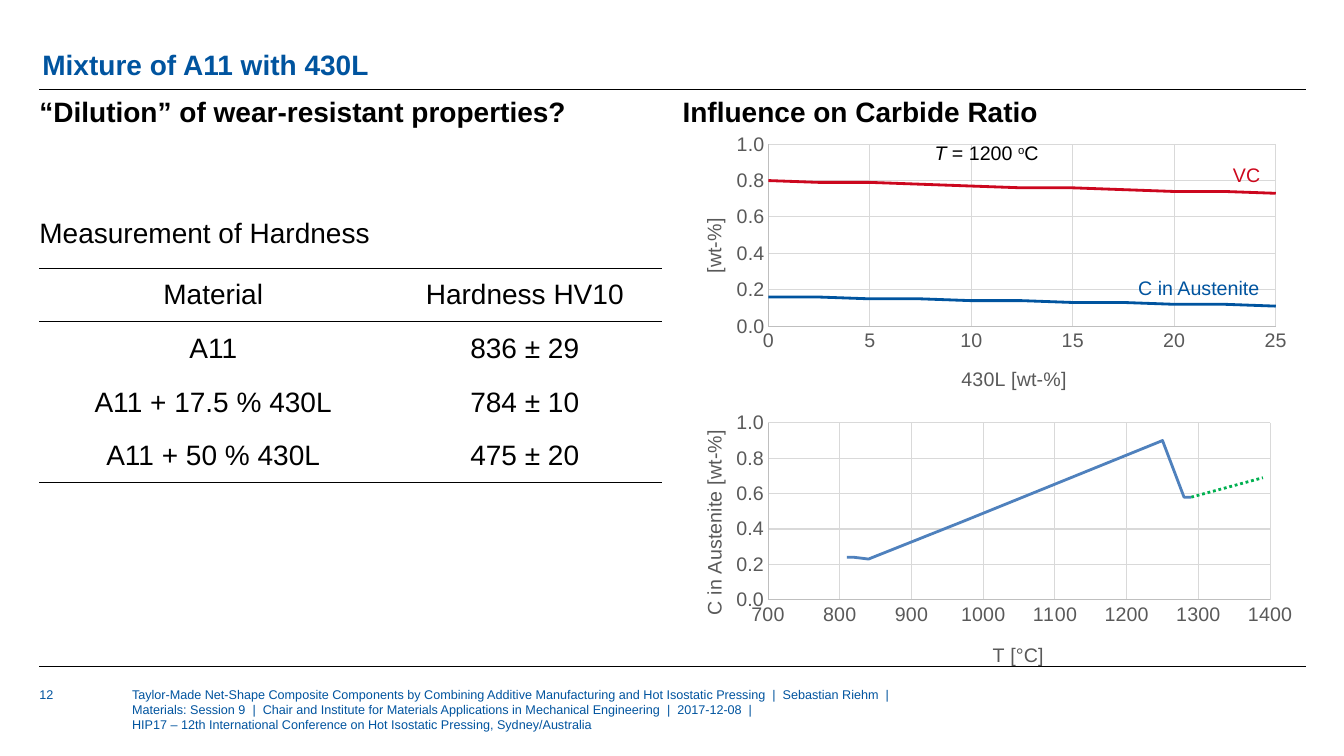
from lxml.etree import SubElement
from pptx import Presentation
from pptx.chart.data import XyChartData
from pptx.dml.color import RGBColor
from pptx.enum.chart import XL_CHART_TYPE, XL_TICK_MARK
from pptx.enum.dml import MSO_LINE
from pptx.enum.shapes import MSO_CONNECTOR
from pptx.enum.text import MSO_ANCHOR, MSO_AUTO_SIZE, PP_ALIGN
from pptx.oxml import parse_xml
from pptx.oxml.ns import nsdecls, qn
from pptx.util import Inches, Pt

COLORS = {
    "black": "000000", "blue": "00549F", "red": "CC071E", "label red": "CD081D",
    "steel": "4F81BD", "green": "00B050", "gray": "595959", "axis": "BFBFBF", "grid": "D9D9D9",
}
FOOTER = (
    "Taylor-Made Net-Shape Composite Components by Combining Additive Manufacturing "
    "and Hot Isostatic Pressing  |  Sebastian Riehm  |\v"
    "Materials: Session 9  |  Chair and Institute for Materials Applications in "
    "Mechanical Engineering  |  2017-12-08  |\v"
    "HIP17 – 12th International Conference on Hot Isostatic Pressing, Sydney/Australia"
)
HARDNESS = [
    ("Material", "Hardness HV10"),
    ("A11", "836 ± 29"),
    ("A11 + 17.5 % 430L", "784 ± 10"),
    ("A11 + 50 % 430L", "475 ± 20"),
]
SHARES = [2.5 * step for step in range(11)]
CARBON = [0.16, 0.16, 0.15, 0.15, 0.14, 0.14, 0.13, 0.13, 0.12, 0.12, 0.11]
CARBIDE = [0.8, 0.79, 0.79, 0.78, 0.77, 0.76, 0.76, 0.75, 0.74, 0.74, 0.73]
# Each curve: colour, dotted, points
MIXTURE_CURVES = [
    ("blue", False, list(zip(SHARES, CARBON))),
    ("red", False, list(zip(SHARES, CARBIDE))),
]
TEMPERATURE_CURVES = [
    ("green", True, [(720, 2), (720, 0.11), (810, 0.24)]),
    ("steel", False, [(810, 0.24), (820, 0.24), (840, 0.23), (970, 0.44),
                      (1250, 0.9), (1280, 0.58), (1290, 0.58)]),
    ("green", True, [(1290, 0.58), (1390, 0.69)]),
]


def color(name):
    return RGBColor.from_string(COLORS[name])


def style_font(font, size, color_name, bold=False):
    font.name = "Arial"
    font.size = Pt(size)
    font.bold = bold
    font.color.rgb = color(color_name)


def clear_insets(frame):
    frame.margin_left = frame.margin_right = frame.margin_top = frame.margin_bottom = 0


def set_title(slide, text):
    title = slide.shapes.title
    title.left, title.top = Inches(0.42), Inches(0.22)
    title.width, title.height = Inches(12.56), Inches(0.59)
    frame = title.text_frame
    frame.text = text
    frame.auto_size = MSO_AUTO_SIZE.NONE
    frame.vertical_anchor = MSO_ANCHOR.BOTTOM
    clear_insets(frame)
    para = frame.paragraphs[0]
    para.alignment = PP_ALIGN.LEFT
    para.line_spacing = 0.9
    style_font(para.runs[0].font, 20, "blue", True)


def add_text(slide, text, left, top, width, height, size=20, color_name="black", bold=False):
    box = slide.shapes.add_textbox(Inches(left), Inches(top), Inches(width), Inches(height))
    frame = box.text_frame
    frame.word_wrap = True
    clear_insets(frame)
    frame.text = text
    for run in frame.paragraphs[0].runs:
        style_font(run.font, size, color_name, bold)


def add_chart_label(slide, parts, left, top, width, color_name):
    """Add an unwrapped label; parts are (text, style) with style "", "italic" or "super"."""
    box = slide.shapes.add_textbox(Inches(left), Inches(top), Inches(width), Inches(0.34))
    box.text_frame.word_wrap = False
    box.text_frame.auto_size = MSO_AUTO_SIZE.SHAPE_TO_FIT_TEXT
    para = box.text_frame.paragraphs[0]
    for text, style in parts:
        run = para.add_run()
        run.text = text
        style_font(run.font, 14, color_name)
        run.font.italic = style == "italic"
        if style == "super":
            run.font._element.set("baseline", "30000")


def add_rule(slide, top):
    rule = slide.shapes.add_connector(
        MSO_CONNECTOR.STRAIGHT, Inches(0.39), Inches(top), Inches(12.95), Inches(top))
    rule.line.color.rgb = color("black")
    rule.line.width = Pt(0.5)
    SubElement(rule._element.spPr, qn("a:effectLst"))


def set_borders(cell, top, bottom):
    """Draw the top and bottom borders with widths in points; 0 means none."""
    properties = cell._tc.get_or_add_tcPr()
    for side, width in (("L", 0), ("R", 0), ("T", top), ("B", bottom)):
        line = SubElement(properties, qn("a:ln" + side), w=str(Pt(width)))
        if width:
            fill = SubElement(line, qn("a:solidFill"))
            SubElement(fill, qn("a:srgbClr"), val=COLORS["black"])
        else:
            SubElement(line, qn("a:noFill"))


def add_hardness_table(slide):
    table = slide.shapes.add_table(
        len(HARDNESS), 2, Inches(0.39), Inches(2.66), Inches(6.18), Inches(2.13)).table
    table.first_row = table.horz_banding = False
    table.columns[0].width, table.columns[1].width = Inches(3.45), Inches(2.73)
    borders = [(1, 0.5), (0.5, 0), (0, 0), (0, 1)]
    for row, (values, (top, bottom)) in enumerate(zip(HARDNESS, borders)):
        for column, value in enumerate(values):
            cell = table.cell(row, column)
            set_borders(cell, top, bottom)
            cell.fill.background()
            cell.vertical_anchor = MSO_ANCHOR.MIDDLE
            cell.margin_left = cell.margin_right = Inches(0.13)
            cell.margin_top = cell.margin_bottom = Inches(0.06)
            cell.text = value
            para = cell.text_frame.paragraphs[0]
            para.alignment = PP_ALIGN.CENTER
            style_font(para.runs[0].font, 20, "black")


def place_layout(parent, index, target, **fractions):
    """Fix the place of a chart part as fractions of the chart's size."""
    for old in parent.findall(qn("c:layout")):
        parent.remove(old)
    layout = parse_xml(f"<c:layout {nsdecls('c')}><c:manualLayout/></c:layout>")
    parent.insert(index, layout)
    if target:
        SubElement(layout[0], qn("c:layoutTarget"), val=target)
    for key in ("xMode", "yMode"):
        SubElement(layout[0], qn("c:" + key), val="edge")
    for key, value in fractions.items():
        SubElement(layout[0], qn("c:" + key), val=str(value))


def style_axis(axis, title, limits, number_format, title_place, turned=False):
    axis.minimum_scale, axis.maximum_scale, axis.major_unit = limits
    axis.major_tick_mark = axis.minor_tick_mark = XL_TICK_MARK.NONE
    axis.has_major_gridlines = True
    for line, name in ((axis.format.line, "axis"), (axis.major_gridlines.format.line, "grid")):
        line.color.rgb = color(name)
        line.width = Pt(0.75)
    axis.tick_labels.number_format = number_format
    axis.tick_labels.number_format_is_linked = False
    style_font(axis.tick_labels.font, 14, "gray")
    frame = axis.axis_title.text_frame
    frame.text = title
    style_font(frame.paragraphs[0].runs[0].font, 14, "gray")
    if turned:
        body = frame._txBody.find(qn("a:bodyPr"))
        body.set("rot", "-5400000")
        body.set("vert", "horz")
    place_layout(axis.axis_title._element, 1, None, x=title_place[0], y=title_place[1])


def add_scatter(slide, place, curves, plot_place, x_axis, y_axis):
    data = XyChartData()
    for number, (_, _, points) in enumerate(curves, 1):
        series = data.add_series(f"Series {number}")
        for x, y in points:
            series.add_data_point(x, y)
    chart = slide.shapes.add_chart(
        XL_CHART_TYPE.XY_SCATTER_LINES_NO_MARKERS, *map(Inches, place), data).chart
    chart.has_title = chart.has_legend = False
    style_font(chart.font, 14, "black")
    plot = chart.plots[0]
    plot.vary_by_categories = False
    for series, (color_name, dotted, _) in zip(plot.series, curves):
        series.smooth = False
        series.format.line.color.rgb = color(color_name)
        series.format.line.width = Pt(2)
        if dotted:
            series.format.line.dash_style = MSO_LINE.ROUND_DOT
    style_axis(chart.category_axis, *x_axis)
    style_axis(chart.value_axis, *y_axis, turned=True)
    place_layout(chart._chartSpace.chart.plotArea, 0, "inner", **plot_place)


def main():
    deck = Presentation()
    deck.slide_width, deck.slide_height = Inches(13.33), Inches(7.5)
    slide = deck.slides.add_slide(deck.slide_layouts[5])
    set_title(slide, "Mixture of A11 with 430L")
    add_rule(slide, 0.89)
    add_rule(slide, 6.61)
    add_text(slide, "12", 0.39, 6.81, 0.8, 0.43, 9, "blue")
    add_text(slide, FOOTER, 1.31, 6.81, 7.66, 0.69, 9, "blue")
    add_text(slide, "“Dilution” of wear-resistant properties?", 0.39, 0.94, 6.18, 0.28, bold=True)
    add_text(slide, "Influence on Carbide Ratio", 6.77, 0.94, 6.18, 0.28, bold=True)
    add_text(slide, "Measurement of Hardness", 0.39, 2.14, 6.18, 0.28)
    add_hardness_table(slide)
    add_scatter(slide, (6.67, 1.27, 6.22, 2.77), MIXTURE_CURVES,
                {"x": 0.153, "y": 0.058, "w": 0.809, "h": 0.652},
                ("430L [wt-%]", (0, 25, 5), "0", (0.455, 0.84)),
                ("[wt-%]", (0, 1, 0.2), "#,##0.0", (0.04, 0.31)))
    add_scatter(slide, (6.67, 4.04, 6.28, 2.73), TEMPERATURE_CURVES,
                {"x": 0.151, "y": 0.057, "w": 0.793, "h": 0.643},
                ("T [°C]", (700, 1400, 100), "General", (0.5, 0.84)),
                ("C in Austenite [wt-%]", (0, 1, 0.2), "#,##0.0", (0.04, 0.07)))
    temperature = [("T", "italic"), (" = 1200 ", ""), ("o", "super"), ("C", "")]
    add_chart_label(slide, temperature, 9.17, 1.35, 1.28, "black")
    add_chart_label(slide, [("C in Austenite", "")], 11.19, 2.69, 1.41, "blue")
    add_chart_label(slide, [("VC", "")], 12.13, 1.57, 0.48, "label red")
    deck.save("out.pptx")


if __name__ == "__main__":
    main()
